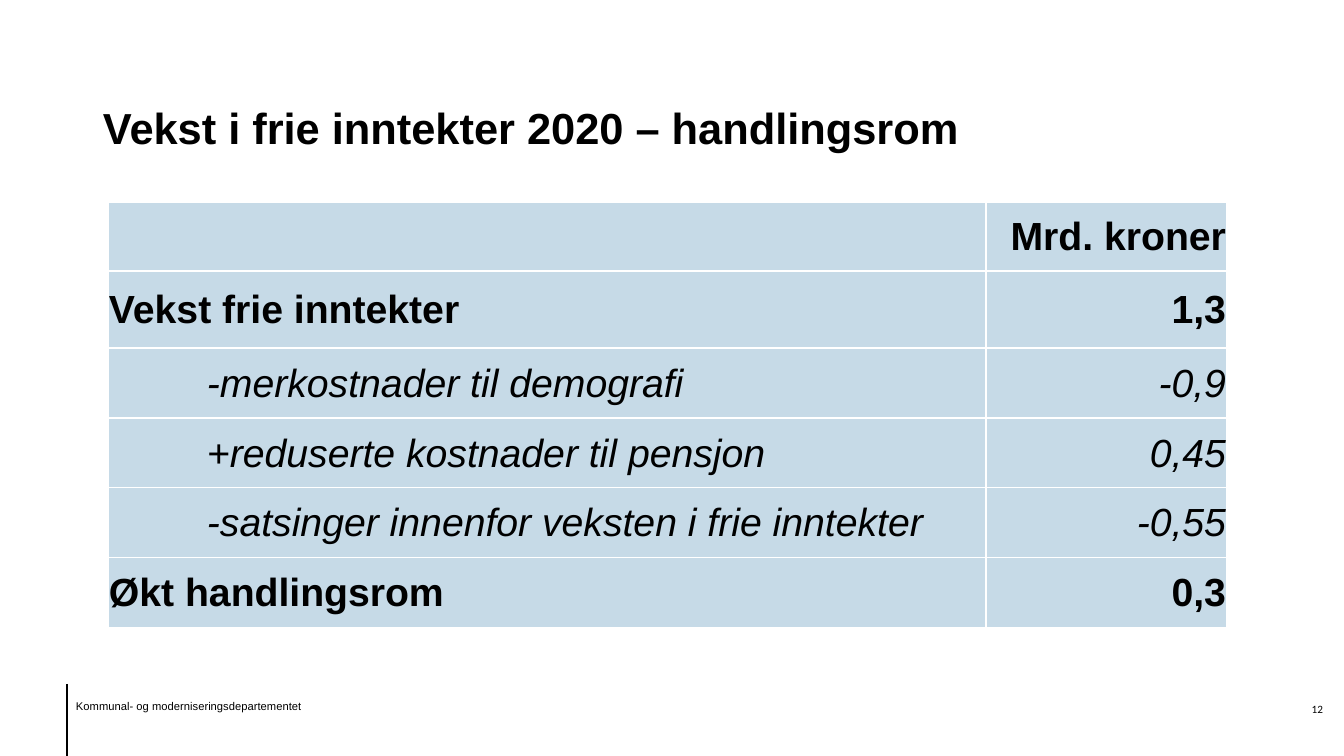
import pptx
import pptx.dml.color
import pptx.enum.shapes
import pptx.enum.text
import pptx.oxml
import pptx.oxml.ns
import pptx.util

EMU_PER_PX = 914400 / 100.8
ALIGN = pptx.enum.text.PP_ALIGN
ANCHOR = pptx.enum.text.MSO_ANCHOR
THEME = {
    "text": pptx.dml.color.RGBColor.from_string("000000"),
    "cell": pptx.dml.color.RGBColor.from_string("C6DAE7"),
    "border": "FFFFFF",
    "font": "Arial",
    "number_font": "Calibri",
    "title_size": 31,
    "table_size": 28,
    "small_size": 8,
}


def px(length):
    return pptx.util.Emu(round(length * EMU_PER_PX))


def write_text(frame, text, size, alignment=ALIGN.LEFT, **formats):
    """Fill the first paragraph of a text frame; formats override the font values."""
    paragraph = frame.paragraphs[0]
    paragraph.alignment = alignment
    run = paragraph.add_run()
    run.text = text
    run.font.color.rgb = THEME["text"]
    values = {"name": THEME["font"], "size": pptx.util.Pt(size), **formats}
    for attribute, value in values.items():
        setattr(run.font, attribute, value)


presentation = pptx.Presentation()
presentation.slide_width = px(1344)
presentation.slide_height = px(756)
slide = presentation.slides.add_slide(presentation.slide_layouts[6])

# Title, footer and slide number
text_boxes = [
    ((93, 32, 1072, 126), "Vekst i frie inntekter 2020 – handlingsrom",
     THEME["title_size"], ALIGN.LEFT, ANCHOR.BOTTOM, {"bold": True}),
    ((66, 694, 285, 22), "Kommunal- og moderniseringsdepartementet",
     THEME["small_size"], ALIGN.LEFT, ANCHOR.TOP, {}),
    ((1274, 697, 49, 39), "12",
     THEME["small_size"], ALIGN.RIGHT, ANCHOR.TOP, {"name": THEME["number_font"]}),
]
for bounds, text, size, alignment, anchor, formats in text_boxes:
    frame = slide.shapes.add_textbox(*map(px, bounds)).text_frame
    frame.word_wrap = True
    frame.vertical_anchor = anchor
    frame.margin_left = px(10)
    frame.margin_right = px(0)
    frame.margin_top = frame.margin_bottom = px(5)
    write_text(frame, text, size, alignment, **formats)

# Footer rule
footer_rule = slide.shapes.add_connector(
    pptx.enum.shapes.MSO_CONNECTOR.STRAIGHT, px(67), px(684), px(67), px(756))
footer_rule.line.color.rgb = THEME["text"]
footer_rule.line.width = pptx.util.Pt(0.75)
footer_rule._element.spPr.append(pptx.oxml.parse_xml(
    f'<a:effectLst {pptx.oxml.ns.nsdecls("a")}/>'))

# Table of income growth
growth_rows = [
    ("", "Mrd. kroner"),
    ("Vekst frie inntekter", "1,3"),
    ("-merkostnader til demografi", "-0,9"),
    ("+reduserte kostnader til pensjon", "0,45"),
    ("-satsinger innenfor veksten i frie inntekter", "-0,55"),
    ("Økt handlingsrom", "0,3"),
]
column_widths = [878, 241]
row_heights = [69, 77, 70, 70, 70, 70]
adjustment_rows = range(2, 5)

table = slide.shapes.add_table(
    len(growth_rows), len(column_widths), px(108), px(202),
    px(sum(column_widths)), px(sum(row_heights))).table
table.first_row = table.horz_banding = False
for column, width in zip(table.columns, column_widths):
    column.width = px(width)

for row_index, (values, height) in enumerate(zip(growth_rows, row_heights)):
    table.rows[row_index].height = px(height)
    is_adjustment = row_index in adjustment_rows
    for column_index, text in enumerate(values):
        cell = table.cell(row_index, column_index)
        cell.vertical_anchor = ANCHOR.MIDDLE
        cell.margin_left = px(99 if is_adjustment and column_index == 0 else 1)
        cell.margin_right = cell.margin_top = px(1)
        cell.margin_bottom = px(0)
        cell_properties = cell._tc.get_or_add_tcPr()
        for side in "LRTB":
            cell_properties.append(pptx.oxml.parse_xml(
                f'<a:ln{side} {pptx.oxml.ns.nsdecls("a")} w="12700"><a:solidFill>'
                f'<a:srgbClr val="{THEME["border"]}"/></a:solidFill></a:ln{side}>'))
        cell.fill.solid()
        cell.fill.fore_color.rgb = THEME["cell"]
        if text:
            write_text(cell.text_frame, text, THEME["table_size"],
                       ALIGN.RIGHT if column_index else ALIGN.LEFT,
                       bold=not is_adjustment, italic=is_adjustment)

presentation.save("out.pptx")
